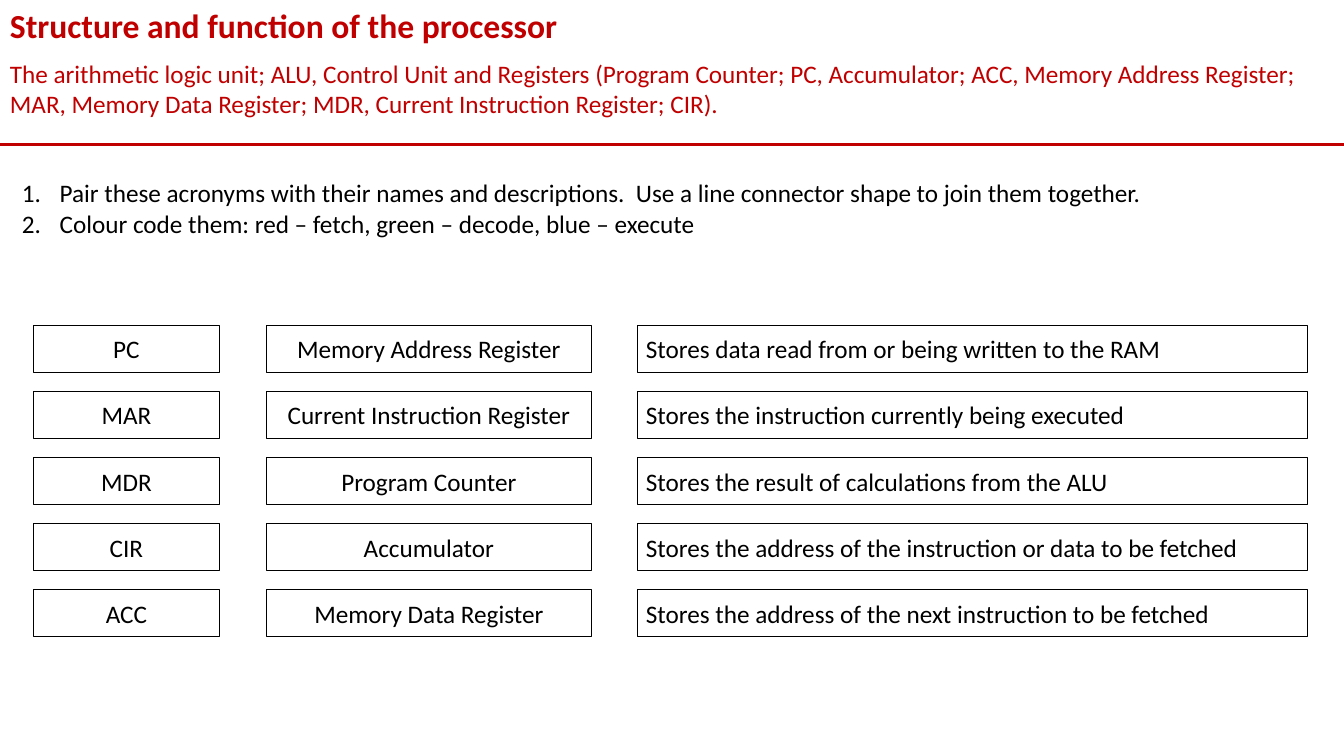
from lxml import etree
from pptx import Presentation
from pptx.dml.color import RGBColor
from pptx.enum.shapes import MSO_CONNECTOR, MSO_SHAPE
from pptx.enum.text import MSO_ANCHOR, MSO_AUTO_SIZE, PP_ALIGN
from pptx.oxml.ns import qn
from pptx.util import Pt

RECT = MSO_SHAPE.RECTANGLE
LINE = MSO_CONNECTOR.STRAIGHT
GROW = MSO_AUTO_SIZE.SHAPE_TO_FIT_TEXT
TOP, MIDDLE = MSO_ANCHOR.TOP, MSO_ANCHOR.MIDDLE
LEFT, CENTER = PP_ALIGN.LEFT, PP_ALIGN.CENTER

WIDTH, HEIGHT = 960, 540
FONT = "Calibri"
COLORS = {"red": "C00000", "ink": "000000"}

TITLE = "Structure and function of the processor"
TOPIC = (
    "The arithmetic logic unit; ALU, Control Unit and Registers "
    "(Program Counter; PC, Accumulator; ACC, Memory Address Register; "
    "MAR, Memory Data Register; MDR, Current Instruction Register; CIR)."
)
TASKS = [
    "Pair these acronyms with their names and descriptions.  "
    "Use a line connector shape to join them together.",
    "Colour code them: red – fetch, green – decode, blue – execute",
]
COLUMNS = [
    (0, 133.2, CENTER, ["PC", "MAR", "MDR", "CIR", "ACC"]),
    (166.4, 232.6, CENTER, [
        "Memory Address Register",
        "Current Instruction Register",
        "Program Counter",
        "Accumulator",
        "Memory Data Register",
    ]),
    (432, 478.2, LEFT, [
        "Stores data read from or being written to the RAM",
        "Stores the instruction currently being executed",
        "Stores the result of calculations from the ALU",
        "Stores the address of the instruction or data to be fetched",
        "Stores the address of the next instruction to be fetched",
    ]),
]


def color(name):
    return RGBColor.from_string(COLORS[name])


def write(frame, lines, size, tint, bold=False, align=LEFT, wrap=True):
    frame.text = "\n".join(lines)
    frame.word_wrap = wrap
    frame.auto_size = GROW
    for para in frame.paragraphs:
        para.alignment = align
        for run in para.runs:
            run.font.name = FONT
            run.font.size = Pt(size)
            run.font.bold = bold
            run.font.color.rgb = color(tint)


def add_text(slide, box, lines, size, tint, **style):
    frame = slide.shapes.add_textbox(*map(Pt, box)).text_frame
    frame.vertical_anchor = TOP
    write(frame, lines, size, tint, **style)
    return frame


def add_head(slide, left, top, width, height):
    add_text(slide, (left, top, width, 36.4), [TITLE], 24, "red", bold=True)
    add_text(slide, (left, top + 38.2, width, 50.9), [TOPIC], 18, "red")
    base = top + height
    rule = slide.shapes.add_connector(
        LINE, Pt(left), Pt(base), Pt(left + width), Pt(base))
    rule.line.color.rgb = color("red")
    rule.line.width = Pt(2.25)
    etree.SubElement(rule._element.spPr, qn("a:effectLst"))


def add_tasks(slide, left, top, width, height):
    frame = add_text(
        slide, (left, top, width, height), TASKS, 18, "ink", wrap=False)
    for para in frame.paragraphs:
        props = para._p.get_or_add_pPr()
        props.set("marL", str(Pt(27)))
        props.set("indent", str(-Pt(27)))
        etree.SubElement(props, qn("a:buFont"), typeface="+mj-lt")
        etree.SubElement(props, qn("a:buAutoNum"), type="arabicPeriod")


def add_card(slide, box, label, align):
    card = slide.shapes.add_shape(RECT, *map(Pt, box))
    card.shadow.inherit = False
    card.fill.background()
    card.line.color.rgb = color("ink")
    card.line.width = Pt(0.75)
    frame = card.text_frame
    frame.margin_left = frame.margin_right = Pt(5.67)
    frame.margin_top = frame.margin_bottom = Pt(5.67)
    frame.vertical_anchor = MIDDLE
    write(frame, [label], 18, "ink", align=align)


def add_cards(slide, left, top, pitch, height):
    for shift, width, align, labels in COLUMNS:
        for row, label in enumerate(labels):
            box = (left + shift, top + row * pitch, width, height)
            add_card(slide, box, label, align)


def main():
    deck = Presentation()
    deck.slide_width, deck.slide_height = Pt(WIDTH), Pt(HEIGHT)
    slide = deck.slides.add_slide(deck.slide_layouts[6])
    add_head(slide, 0, 0, WIDTH, 103.4)
    add_tasks(slide, 8.5, 123.4, 819.2, 50.9)
    add_cards(slide, 23.7, 232.5, 47.2, 33.4)
    deck.save("out.pptx")


if __name__ == "__main__":
    main()
